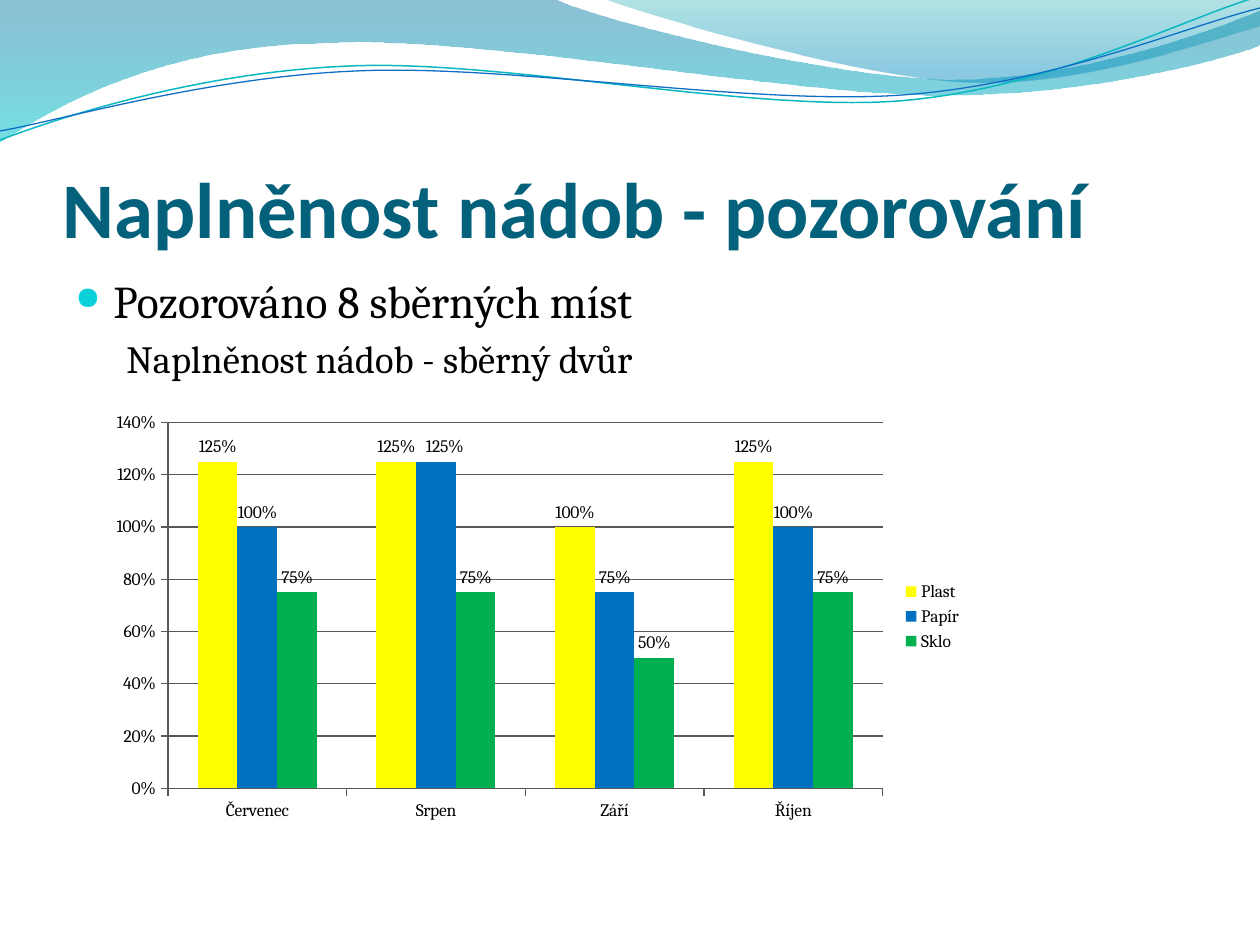
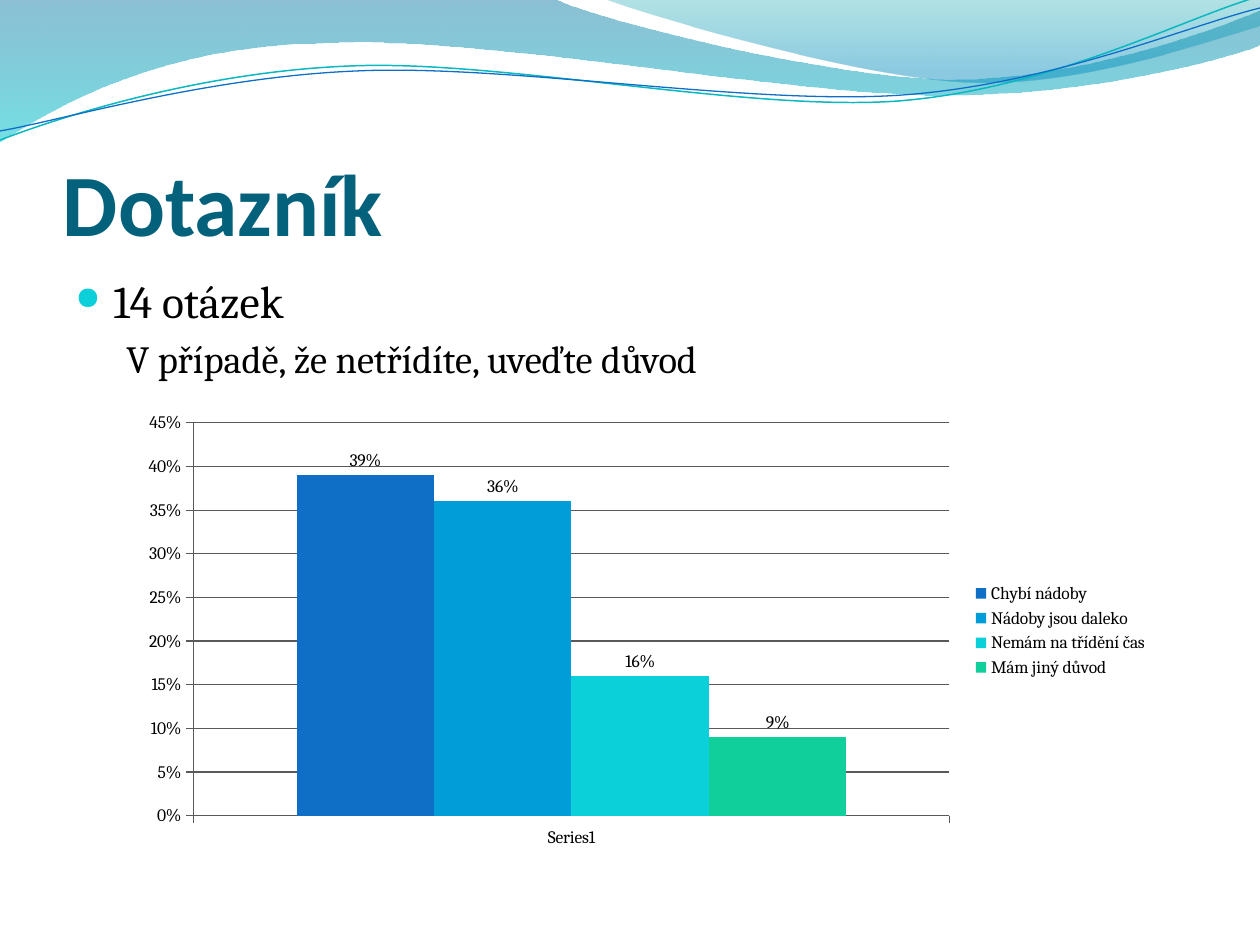
from lxml import etree
from pptx import Presentation
from pptx import util as u
from pptx.chart.data import CategoryChartData
from pptx.dml.color import RGBColor
from pptx.enum import chart as c
from pptx.enum import text as t
from pptx.oxml import ns

PX = 914400 // 126
SLIDE_SIZE = (1260, 945)
TITLE_BOX = (63, 96, 1134, 158)
BODY_BOX = (63, 267, 1134, 605)
HEAD_FONT, BODY_FONT = "Calibri", "Cambria"
TITLE, BLACK, BULLET, AXIS = "04617B", "000000", "0BD0D9", "595959"

# Outlines: one point is a straight step, three points are a Bézier step.
# Gradient stops: position, colour, opacity in percent.
BANDS = [
    ((0, 0),
     [[(554, -1)],
      [(600, 21), (837, 79), (955, 79)], [(1075, 79), (1207, 33), (1260, 11)],
      [(1261, 45)],
      [(1239, 55), (1096, 96), (940, 95)], [(784, 95), (481, 35), (324, 43)],
      [(163, 45), (58, 105), (-1, 142)]],
     [(0, "0074A1", 45), (1, "00C6CF", 55)]),
    ((604, -1),
     [[(641, 14), (859, 78), (969, 82)], [(1079, 87), (1211, 40), (1260, 26)],
      [(1260, 0)]],
     [(0, "00A1A9", 30), (0.8, "008BBF", 45)]),
]
WAVES = [
    ((0, 140),
     [[(60, 117), (199, 72), (349, 66)], [(498, 59), (747, 112), (898, 101)],
      [(1050, 89), (1182, 19), (1257, -3)]],
     "0AB8BF", 0.85),
    ((0, 131),
     [[(59, 121), (207, 77), (357, 71)], [(508, 64), (752, 106), (903, 95)],
      [(1053, 84), (1187, 26), (1260, 8)]],
     "0F6FC6", 0.75),
]

SLIDES = [
    {"title": "Naplněnost nádob - pozorování", "title_size": 45,
     "point": "Pozorováno 8 sběrných míst",
     "caption": "Naplněnost nádob - sběrný dvůr",
     "chart_box": (99, 404, 876, 425), "top": 1.4, "step": 0.2,
     "categories": ["Červenec", "Srpen", "Září", "Říjen"],
     "series": [("Plast", "FFFF00", [1.25, 1.25, 1, 1.25]),
                ("Papír", "0070C0", [1, 1.25, 0.75, 1]),
                ("Sklo", "00B050", [0.75, 0.75, 0.5, 0.75])],
     "moved_label": (1, 1, 0.01)},  # series, point, shift right
    {"title": "Dotazník", "title_size": 50,
     "point": "14 otázek",
     "caption": "V případě, že netřídíte, uveďte důvod",
     "chart_box": (128, 404, 1033, 453), "top": 0.45, "step": 0.05,
     "categories": ["Series1"],
     "series": [("Chybí nádoby", "0F6FC6", [0.39]),
                ("Nádoby jsou daleko", "009DD9", [0.36]),
                ("Nemám na třídění čas", "0BD0D9", [0.16]),
                ("Mám jiný důvod", "10CF9B", [0.09])]},
]


def color(value):
    return RGBColor.from_string(value)


def emu(lengths):
    return [round(length * PX) for length in lengths]


def add_xml(parent, tag, **attributes):
    child = etree.SubElement(parent, ns.qn(tag))
    for name, value in attributes.items():
        child.set(name, str(value))
    return child


def add_outline(slide, start, steps, close):
    """Draw straight steps, then join each three-point step into one curve."""
    builder = slide.shapes.build_freeform(*emu(start))
    builder.add_line_segments([emu(point) for step in steps for point in step], close=close)
    shape = builder.convert_to_shape()
    shape.shadow.inherit = False
    lines = iter(shape._element.xpath(".//a:lnTo"))
    for step in steps:
        parts = [next(lines) for _ in step]
        if len(parts) == 3:
            curve = etree.Element(ns.qn("a:cubicBezTo"))
            parts[0].addprevious(curve)
            for part in parts:
                curve.append(part[0])
                part.getparent().remove(part)
    return shape


def add_header(slide, layout):
    """Draw the bands and waves and hand them to the layout of all slides."""
    drawn = []
    for start, steps, stops in BANDS:
        band = add_outline(slide, start, steps, True)
        band.line.fill.background()
        band.fill.gradient()
        band.fill.gradient_angle = 270
        for stop, (position, tint, _) in zip(band.fill.gradient_stops, stops):
            stop.position = position
            stop.color.rgb = color(tint)
        for node, (_, _, opacity) in zip(band._element.xpath(".//a:gs/a:srgbClr"), stops):
            add_xml(node, "a:alpha", val=opacity * 1000)
        drawn.append(band)
    for start, steps, tint, width in WAVES:
        wave = add_outline(slide, start, steps, False)
        wave.fill.background()
        wave.line.color.rgb = color(tint)
        wave.line.width = u.Pt(width)
        drawn.append(wave)
    for placeholder in list(layout.placeholders):
        placeholder._element.getparent().remove(placeholder._element)
    for shape in drawn:
        layout.shapes._spTree.append(shape._element)


def add_box(slide, place, insets, anchor):
    frame = slide.shapes.add_textbox(*emu(place)).text_frame
    frame.word_wrap = True
    frame.vertical_anchor = anchor
    (frame.margin_left, frame.margin_top,
     frame.margin_right, frame.margin_bottom) = [u.Inches(inset) for inset in insets]
    return frame


def write(para, text, size, font=BODY_FONT, tint=BLACK, bold=False,
          margin=0, bullet=False, before=0):
    span = para.add_run()
    span.text = text
    span.font.size, span.font.name, span.font.bold = u.Pt(size), font, bold
    span.font.color.rgb = color(tint)
    para.space_before = u.Pt(before)
    props = para._p.get_or_add_pPr()
    props.set("marL", str(margin * PX))
    if bullet:
        props.set("indent", str(-margin * PX))
        add_xml(add_xml(props, "a:buClr"), "a:srgbClr", val=BULLET)
        add_xml(props, "a:buSzPct", val=70000)
        add_xml(props, "a:buChar", char="●")


def style_text(font):
    font.size, font.name = u.Pt(10), BODY_FONT
    font.color.rgb = color(BLACK)


def style_line(line):
    line.color.rgb = color(AXIS)
    line.width = u.Pt(0.75)


def move_label(series, index, shift):
    label = series.points[index].data_label
    label.position = c.XL_LABEL_POSITION.OUTSIDE_END
    style_text(label.font)
    node = series._element.xpath(".//c:dLbl")[0]
    layout = etree.Element(ns.qn("c:layout"))
    manual = add_xml(layout, "c:manualLayout")
    add_xml(manual, "c:x", val=shift)
    add_xml(manual, "c:y", val=0)
    node.insert(1, layout)


def add_columns(slide, content):
    data = CategoryChartData(number_format="0%")
    data.categories = content["categories"]
    for name, _, values in content["series"]:
        data.add_series(name, values)
    chart = slide.shapes.add_chart(c.XL_CHART_TYPE.COLUMN_CLUSTERED,
                                   *emu(content["chart_box"]), data).chart
    style_text(chart.font)
    chart.has_title = False
    chart.has_legend = True
    chart.legend.position = c.XL_LEGEND_POSITION.RIGHT
    chart.legend.include_in_layout = False

    for axis in (chart.category_axis, chart.value_axis):
        axis.major_tick_mark = c.XL_TICK_MARK.OUTSIDE
        style_line(axis.format.line)
    scale = chart.value_axis
    scale.minimum_scale, scale.maximum_scale = 0, content["top"]
    scale.major_unit = content["step"]
    scale.tick_labels.number_format = "0%"
    scale.tick_labels.number_format_is_linked = False
    style_line(scale.major_gridlines.format.line)

    plot = chart.plots[0]
    plot.gap_width, plot.overlap, plot.vary_by_categories = 150, 0, False
    for series, (_, tint, _) in zip(plot.series, content["series"]):
        series.format.fill.solid()
        series.format.fill.fore_color.rgb = color(tint)
        labels = series.data_labels
        labels.show_value = True
        labels.number_format, labels.number_format_is_linked = "0%", False
        labels.position = c.XL_LABEL_POSITION.OUTSIDE_END
        style_text(labels.font)
    if "moved_label" in content:
        which, index, shift = content["moved_label"]
        move_label(plot.series[which], index, shift)


def add_content(slide, content):
    title = add_box(slide, TITLE_BOX, (0, 0.05, 0, 0), t.MSO_ANCHOR.BOTTOM)
    write(title.paragraphs[0], content["title"], content["title_size"],
          font=HEAD_FONT, tint=TITLE, bold=True)
    body = add_box(slide, BODY_BOX, (0.1, 0.05, 0.1, 0.05), t.MSO_ANCHOR.TOP)
    write(body.paragraphs[0], content["point"], 26, margin=38, bullet=True, before=5)
    write(body.add_paragraph(), content["caption"], 22, margin=51, before=4.4)
    add_columns(slide, content)


def main():
    deck = Presentation()
    deck.slide_width, deck.slide_height = emu(SLIDE_SIZE)
    blank = deck.slide_layouts[6]
    pages = [deck.slides.add_slide(blank) for _ in SLIDES]
    add_header(pages[0], blank)
    for slide, content in zip(pages, SLIDES):
        add_content(slide, content)
    deck.save("out.pptx")


if __name__ == "__main__":
    main()
